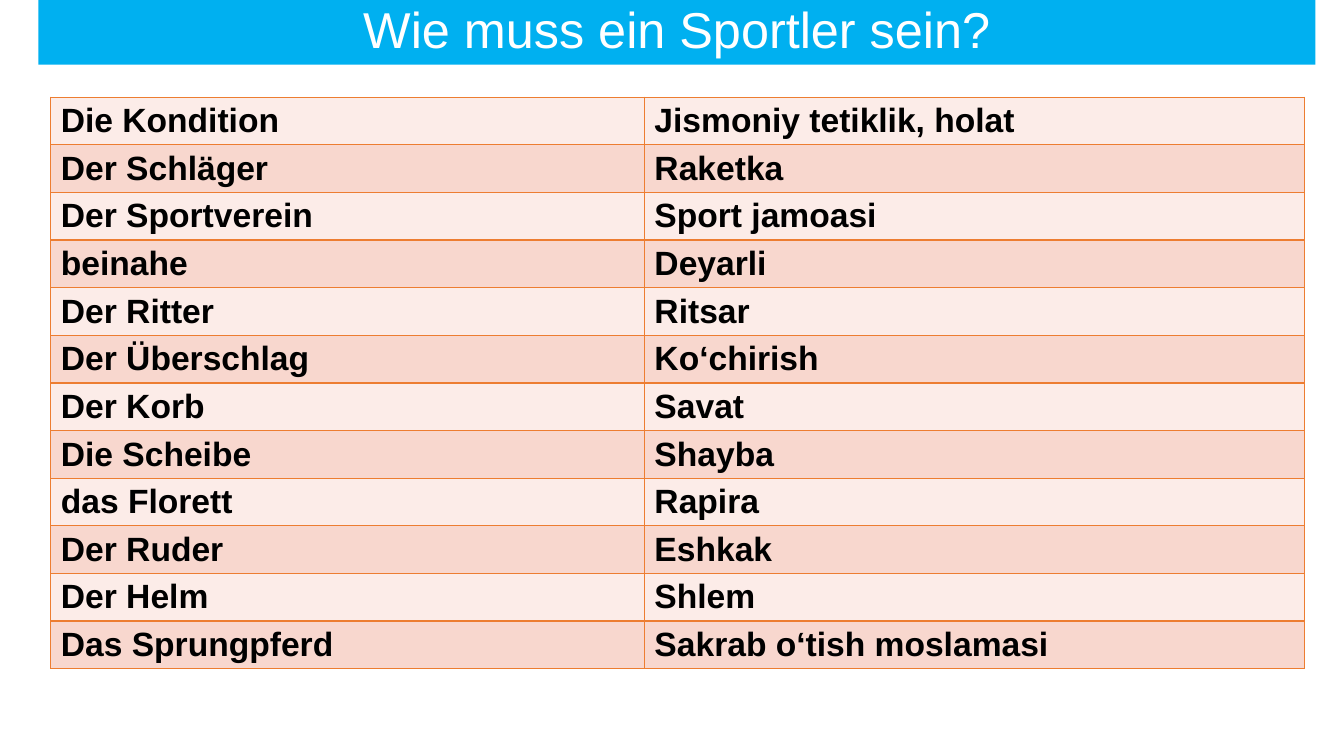
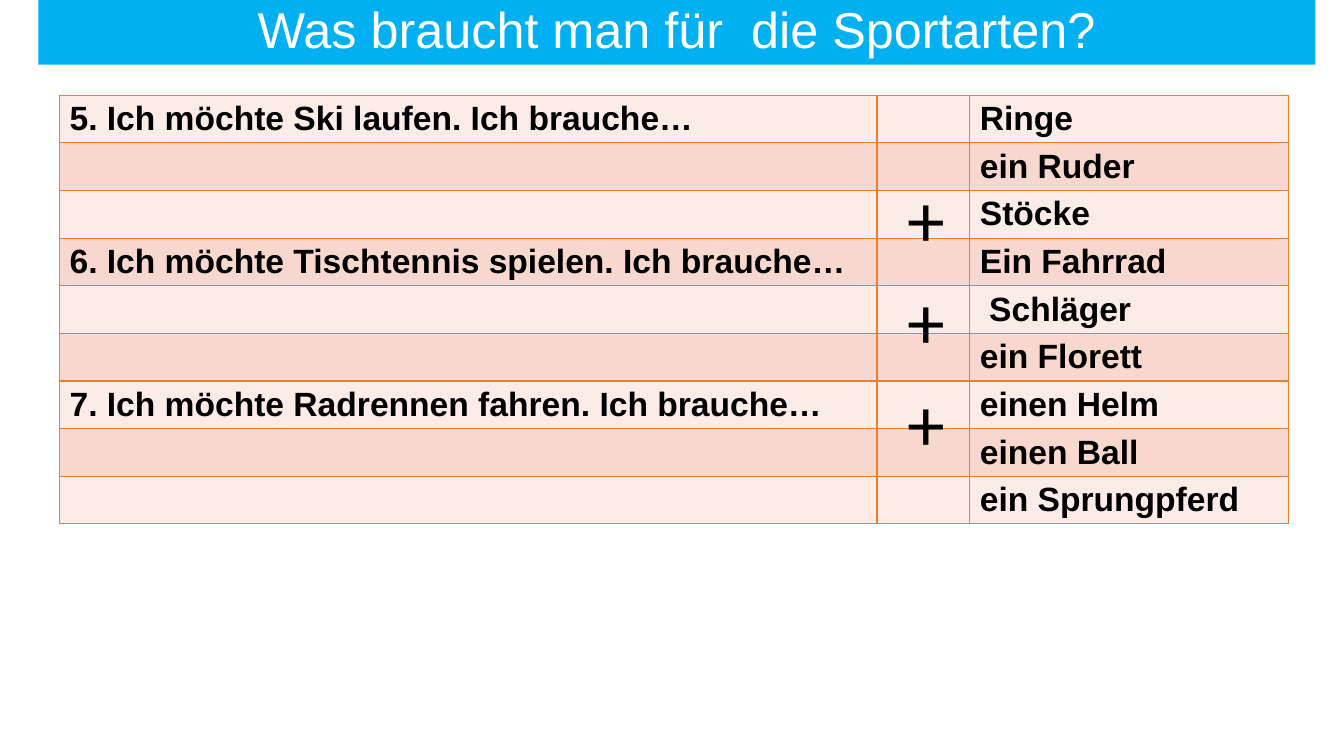
from dataclasses import dataclass

from lxml import etree
from pptx import Presentation
from pptx.dml.color import RGBColor
from pptx.enum.text import MSO_ANCHOR, MSO_AUTO_SIZE, PP_ALIGN
from pptx.oxml.ns import qn
from pptx.util import Cm, Pt

CENTER = PP_ALIGN.CENTER
BOTTOM, MIDDLE = MSO_ANCHOR.BOTTOM, MSO_ANCHOR.MIDDLE
NO_AUTOFIT, GROW_SHAPE = MSO_AUTO_SIZE.NONE, MSO_AUTO_SIZE.SHAPE_TO_FIT_TEXT
TITLE_ONLY = 5


@dataclass(frozen=True)
class Theme:
    band: str = "00B0F0"
    title_text: str = "FFFFFF"
    text: str = "000000"
    border: str = "ED7D31"
    row_fills: tuple = ("FCECE8", "F8D7CE")
    font: str = "Arial"
    sign_font: str = "Calibri"
    title_size: int = 36
    table_size: int = 24
    sign_size: int = 54
    border_width: int = 1


class Deck:
    """Holds the style and the slide being built."""

    def __init__(self, theme):
        self.theme = theme
        self.presentation = Presentation()
        self.presentation.slide_width = Cm(33.87)
        self.presentation.slide_height = Cm(19.05)
        self.slide = None

    def add_run(self, paragraph, text, size, color, font, bold=False):
        run = paragraph.add_run()
        run.text = text
        run.font.size = Pt(size)
        run.font.name = font
        run.font.bold = bold
        run.font.color.rgb = RGBColor.from_string(color)

    def add_slide(self, title):
        """Start a slide with its title in the coloured band."""
        theme = self.theme
        layout = self.presentation.slide_layouts[TITLE_ONLY]
        self.slide = self.presentation.slides.add_slide(layout)
        shape = self.slide.shapes.title
        shape.left, shape.top = Cm(0.97), Cm(0)
        shape.width, shape.height = Cm(32.18), Cm(1.63)
        shape.fill.solid()
        shape.fill.fore_color.rgb = RGBColor.from_string(theme.band)
        frame = shape.text_frame
        frame.auto_size = NO_AUTOFIT
        frame.vertical_anchor = BOTTOM
        paragraph = frame.paragraphs[0]
        paragraph.alignment = CENTER
        paragraph.line_spacing = 0.9
        self.add_run(paragraph, title, theme.title_size, theme.title_text, theme.font)

    def add_borders(self, cell):
        properties = cell._tc.get_or_add_tcPr()
        for index, side in enumerate(("a:lnL", "a:lnR", "a:lnT", "a:lnB")):
            line = etree.Element(qn(side), w=str(Pt(self.theme.border_width)))
            fill = etree.SubElement(line, qn("a:solidFill"))
            etree.SubElement(fill, qn("a:srgbClr"), val=self.theme.border)
            properties.insert(index, line)

    def add_table(self, left, top, column_widths, rows, row_height=1.2):
        """Add a banded table; all lengths are in centimetres."""
        theme = self.theme
        table = self.slide.shapes.add_table(
            len(rows), len(column_widths), Cm(left), Cm(top),
            Cm(sum(column_widths)), Cm(row_height * len(rows))).table
        table.first_row = table.horz_banding = False
        for column, width in zip(table.columns, column_widths):
            column.width = Cm(width)
        for row_index, texts in enumerate(rows):
            table.rows[row_index].height = Cm(row_height)
            row_fill = theme.row_fills[row_index % len(theme.row_fills)]
            for column_index, text in enumerate(texts):
                cell = table.cell(row_index, column_index)
                cell.margin_top = cell.margin_bottom = Cm(0.1)
                cell.vertical_anchor = MIDDLE
                cell.fill.solid()
                cell.fill.fore_color.rgb = RGBColor.from_string(row_fill)
                self.add_borders(cell)
                if text:
                    self.add_run(cell.text_frame.paragraphs[0], text,
                                 theme.table_size, theme.text, theme.font, bold=True)

    def add_sign(self, text, left, top, width, height):
        """Add a large centred sign."""
        theme = self.theme
        box = self.slide.shapes.add_textbox(Cm(left), Cm(top), Cm(width), Cm(height))
        frame = box.text_frame
        frame.word_wrap = False
        frame.auto_size = GROW_SHAPE
        paragraph = frame.paragraphs[0]
        paragraph.alignment = CENTER
        self.add_run(paragraph, text, theme.sign_size, theme.text, theme.sign_font)


# Slide content
VOCABULARY = [
    ("Die Kondition", "Jismoniy tetiklik, holat"),
    ("Der Schläger", "Raketka"),
    ("Der Sportverein", "Sport jamoasi"),
    ("beinahe", "Deyarli"),
    ("Der Ritter", "Ritsar"),
    ("Der Überschlag", "Ko‘chirish"),
    ("Der Korb", "Savat"),
    ("Die Scheibe", "Shayba"),
    ("das Florett", "Rapira"),
    ("Der Ruder", "Eshkak"),
    ("Der Helm", "Shlem"),
    ("Das Sprungpferd", "Sakrab o‘tish moslamasi"),
]

# Each sentence heads a group of three possible answers
EXERCISES = [
    ("5. Ich möchte Ski laufen. Ich brauche…",
     ("Ringe", "ein Ruder", "Stöcke")),
    ("6. Ich möchte Tischtennis spielen. Ich brauche…",
     ("Ein Fahrrad", " Schläger", "ein Florett")),
    ("7. Ich möchte Radrennen fahren. Ich brauche…",
     ("einen Helm", "einen Ball", "ein Sprungpferd")),
]


def main():
    deck = Deck(Theme())

    # Vocabulary
    deck.add_slide("Wie muss ein Sportler sein?")
    deck.add_table(1.28, 2.45, (14.96, 16.64), VOCABULARY)

    # Equipment exercise
    deck.add_slide("Was braucht man für  die Sportarten?")
    rows = [(sentence if index == 0 else "", "", answer)
            for sentence, answers in EXERCISES
            for index, answer in enumerate(answers)]
    deck.add_table(1.5, 2.4, (20.6, 2.34, 8.03), rows)
    sign_height = 2.57
    for index in range(len(EXERCISES)):
        deck.add_sign("+", 22.61, 4.22 + index * sign_height, 1.47, sign_height)

    deck.presentation.save("out.pptx")


if __name__ == "__main__":
    main()
